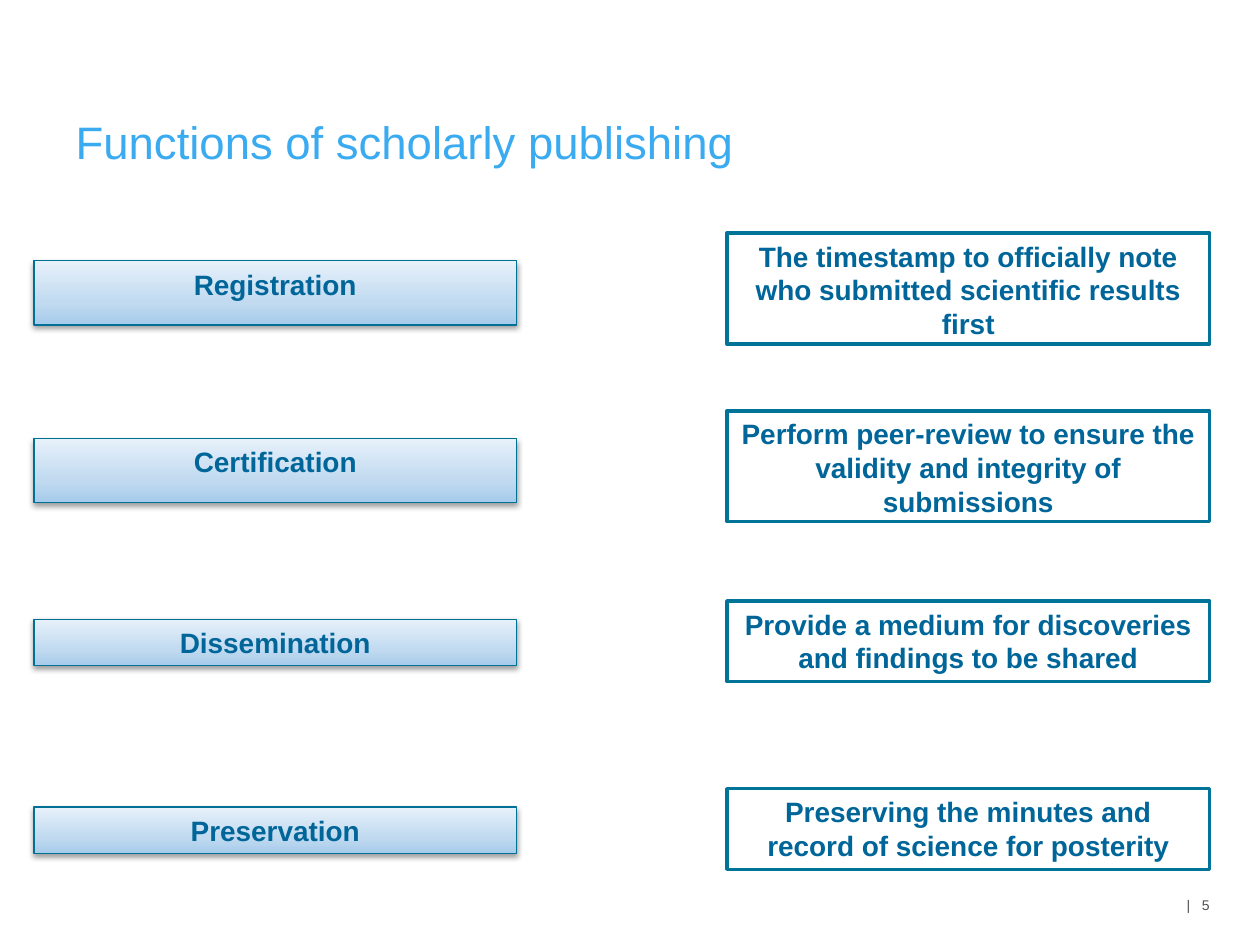
from lxml.etree import SubElement
from pptx import Presentation
from pptx.dml.color import RGBColor
from pptx.enum.shapes import MSO_SHAPE
from pptx.enum.text import MSO_ANCHOR, MSO_AUTO_SIZE, PP_ALIGN
from pptx.oxml.ns import qn
from pptx.util import Inches, Pt

COLORS = {
    "title": "3AABF0", "text": "006699", "label_line": "007095",
    "meaning_line": "007398", "white": "FFFFFF", "number": "505050",
    "shadow": "000000",
}
GRADIENT = [(0, "A6CBEB"), (35, "C1DAF0"), (100, "E7F1FA")]
FONT = "Arial"
LABEL_LEFT, MEANING_LEFT, BOX_WIDTH = 0.27, 5.77, 3.83
TALL, SHORT = (0.22, 0.51, 0.88), (0.145, 0.37, 0.64)
FUNCTIONS = [
    (1.85, TALL, "Registration",
     "The timestamp to officially note who submitted scientific results first"),
    (3.26, TALL, "Certification",
     "Perform peer-review to ensure the validity and integrity of submissions"),
    (4.77, SHORT, "Dissemination",
     "Provide a medium for discoveries and findings to be shared"),
    (6.26, SHORT, "Preservation",
     "Preserving the minutes and record of science for posterity"),
]


def color(name):
    """Return the named colour."""
    return RGBColor.from_string(COLORS[name])


def style_paragraph(para, size, color_name, align, bold=False):
    """Set the font and alignment of a paragraph."""
    para.alignment = align
    para.font.name = FONT
    para.font.size = Pt(size)
    para.font.bold = bold
    para.font.color.rgb = color(color_name)


def add_color_stop(parent, hex_color):
    """Add an RGB colour element and return it."""
    return SubElement(parent, qn("a:srgbClr"), val=hex_color)


def add_box(group, box, text, line_name, line_width):
    """Add an outlined rectangle with centred bold text."""
    shape = group.shapes.add_shape(MSO_SHAPE.RECTANGLE, *map(Inches, box))
    shape.shadow.inherit = False
    shape.line.color.rgb = color(line_name)
    shape.line.width = Pt(line_width)
    frame = shape.text_frame
    frame.word_wrap = True
    frame.vertical_anchor = MSO_ANCHOR.TOP
    frame.text = text
    style_paragraph(frame.paragraphs[0], 16, "text", PP_ALIGN.CENTER, True)
    return shape


def add_label(group, box, text):
    """Add a function name on a shaded box with a soft shadow."""
    shape = add_box(group, box, text, "label_line", 0.75)
    shape.fill.gradient()
    shape.fill.gradient_angle = 90
    properties = shape.element.spPr
    stops = properties.find(".//" + qn("a:gsLst"))
    stops.clear()
    for position, hex_color in GRADIENT:
        stop = SubElement(stops, qn("a:gs"), pos=str(position * 1000))
        add_color_stop(stop, hex_color)
    shadow = SubElement(
        properties.find(qn("a:effectLst")), qn("a:outerShdw"),
        blurRad="40000", dist="20000", dir="5400000", rotWithShape="0")
    shade = add_color_stop(shadow, COLORS["shadow"])
    SubElement(shade, qn("a:alpha"), val="38000")


def add_meaning(group, box, text):
    """Add the explanation of a function in a white box."""
    shape = add_box(group, box, text, "meaning_line", 2)
    shape.fill.solid()
    shape.fill.fore_color.rgb = color("white")


def add_function(page, top, row, label, meaning):
    """Add one grouped row with a label and its meaning."""
    offset, label_height, meaning_height = row
    group = page.shapes.add_group_shape()
    add_label(group, (LABEL_LEFT, top + offset, BOX_WIDTH, label_height), label)
    add_meaning(group, (MEANING_LEFT, top, BOX_WIDTH, meaning_height), meaning)


def add_title(page, box, text):
    """Place and format the title placeholder."""
    title = page.shapes.title
    title.left, title.top, title.width, title.height = map(Inches, box)
    frame = title.text_frame
    frame.text = text
    frame.word_wrap = True
    frame.auto_size = MSO_AUTO_SIZE.NONE
    frame.vertical_anchor = MSO_ANCHOR.MIDDLE
    style_paragraph(frame.paragraphs[0], 26, "title", PP_ALIGN.LEFT)


def add_page_number(page, box, number):
    """Add the page number after a spaced bar."""
    frame = page.shapes.add_textbox(*map(Inches, box)).text_frame
    frame.word_wrap = True
    frame.vertical_anchor = MSO_ANCHOR.MIDDLE
    para = frame.paragraphs[0]
    style_paragraph(para, 8, "number", PP_ALIGN.RIGHT)
    bar = para.add_run()
    bar.text = "| "
    bar.font.size = Pt(8)
    bar.font.element.set("spc", "220") if hasattr(bar.font, "element") else (
        para.runs[0].font._element.set("spc", "220")
        if hasattr(bar.font, "_element") else bar._r.get_or_add_rPr().set("spc", "220"))
    para.add_run().text = str(number)


def main():
    """Build the slide and save the deck."""
    deck = Presentation()
    deck.slide_width, deck.slide_height = Inches(10), Inches(7.5)
    page = deck.slides.add_slide(deck.slide_layouts[5])
    add_page_number(page, (9.06, 7, 0.64, 0.37), 5)
    add_title(page, (0.5, 0.91, 9.01, 0.42), "Functions of scholarly publishing")
    for function in FUNCTIONS:
        add_function(page, *function)
    deck.save("out.pptx")


if __name__ == "__main__":
    main()
